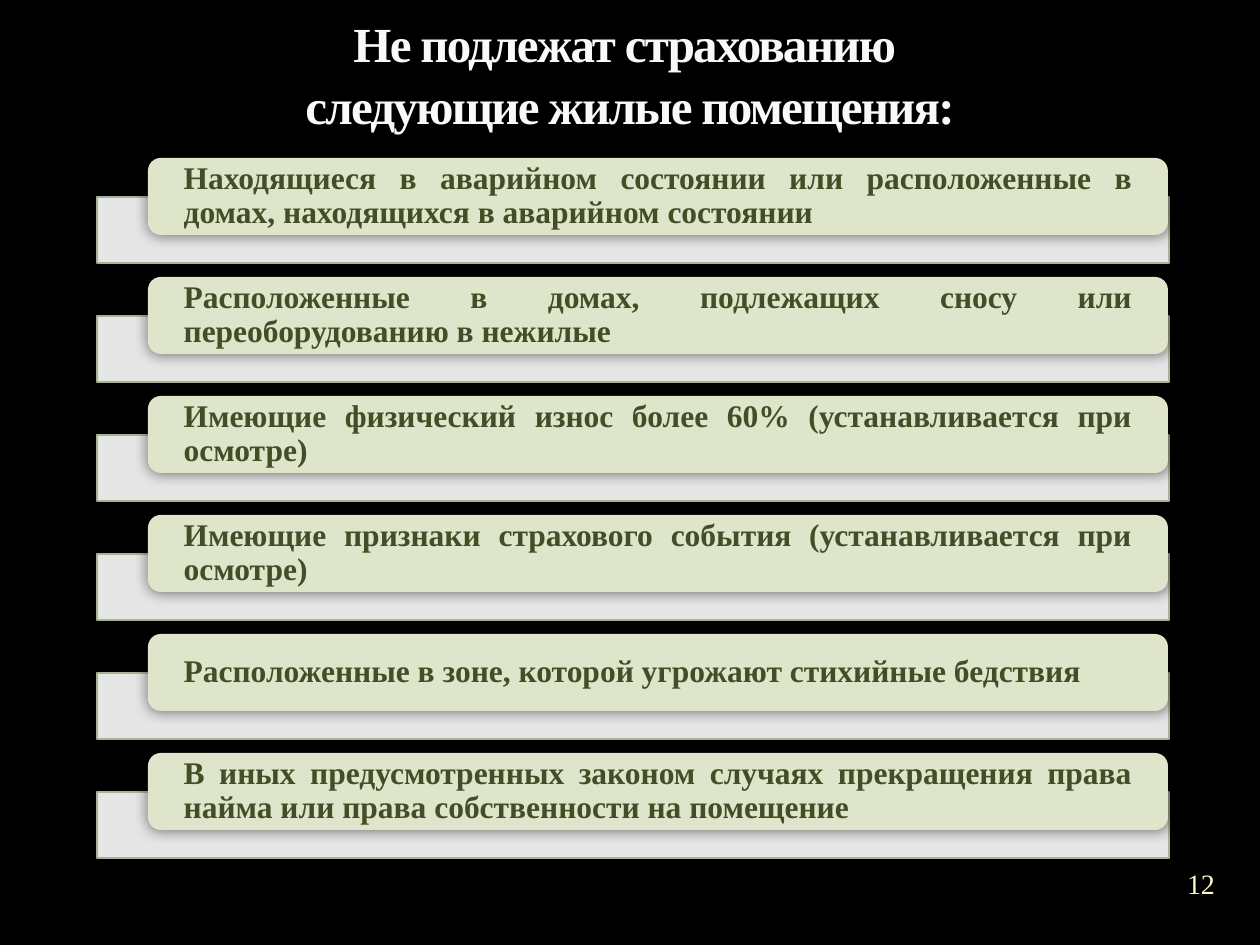
from pptx import Presentation, util as u
from pptx.dml.color import RGBColor
from pptx.enum import shapes, text
from pptx.oxml import parse_xml
from pptx.oxml.ns import nsdecls, qn

PX = 914400 / 126
FONT = "Times New Roman"
CASES = [
    "Находящиеся в аварийном состоянии или расположенные в домах, "
    "находящихся в аварийном состоянии ",
    "Расположенные в домах, подлежащих сносу или переоборудованию в нежилые",
    "Имеющие физический износ более 60% (устанавливается при осмотре)",
    "Имеющие признаки страхового события (устанавливается при осмотре)",
    "Расположенные в зоне, которой угрожают стихийные бедствия",
    "В иных предусмотренных законом случаях прекращения права найма "
    "или права собственности на помещение",
]
FIRST_TOP, PITCH = 158, 119


def px(*lengths):
    return [u.Emu(round(length * PX)) for length in lengths]


def paint(target, color):
    target.solid()
    target.fore_color.rgb = RGBColor.from_string(color)


def set_frame(shape, anchor, side=0, edge=0):
    frame = shape.text_frame
    frame.word_wrap = True
    frame.auto_size = text.MSO_AUTO_SIZE.NONE
    frame.vertical_anchor = anchor
    frame.margin_left, frame.margin_right = px(side, side)
    frame.margin_top, frame.margin_bottom = px(edge, edge)
    return frame.paragraphs[0]


def add_run(paragraph, words, size, color, bold=False):
    run = paragraph.add_run()
    run.text = words
    run.font.name = FONT
    run.font.size = u.Pt(size)
    run.font.bold = bold
    run.font.color.rgb = RGBColor.from_string(color)
    return run


def add_box(slide, kind, box, color):
    shape = slide.shapes.add_shape(kind, *px(*box))
    shape.shadow.inherit = False
    paint(shape.fill, color)
    return shape


def add_glow_shadow(shape):
    effects = shape._element.spPr.find(qn("a:effectLst"))
    effects.append(parse_xml(
        f'<a:outerShdw {nsdecls("a")} blurRad="95250" dist="0" dir="0" rotWithShape="0">'
        '<a:srgbClr val="000000"><a:alpha val="50000"/></a:srgbClr></a:outerShdw>'))


def add_title(slide):
    title = slide.shapes.title
    title.left, title.top, title.width, title.height = px(63, 45, 1134, 95)
    paragraph = set_frame(title, text.MSO_ANCHOR.BOTTOM, side=13, edge=6)
    paragraph.alignment = text.PP_ALIGN.CENTER
    paragraph.line_spacing = 1.05
    lines = ["Не подлежат страхованию ", "следующие жилые помещения:"]
    for number, line in enumerate(lines):
        if number:
            paragraph.add_line_break()
        run = add_run(paragraph, line, 28, "F9F9F9", bold=True)
        run.font._element.set("spc", "-100")


def add_case(slide, top, words):
    # Bar behind the card
    bar = add_box(slide, shapes.MSO_SHAPE.RECTANGLE, (97, top + 39, 1072, 66), "FFFFFF")
    bar_color = bar.fill._xPr.find(qn("a:solidFill"))[0]
    bar_color.append(parse_xml(f'<a:alpha {nsdecls("a")} val="90000"/>'))
    paint(bar.line.fill, "A5B592")
    bar.line.width = u.Pt(1)

    # Card with its wording
    card = add_box(slide, shapes.MSO_SHAPE.ROUNDED_RECTANGLE, (148, top, 1020, 77), "DFE5CA")
    card.line.fill.background()
    add_glow_shadow(card)
    paragraph = set_frame(card, text.MSO_ANCHOR.MIDDLE, side=32)
    paragraph.alignment = text.PP_ALIGN.JUSTIFY
    paragraph.line_spacing = 0.9
    add_run(paragraph, words, 18, "444D26", bold=True)


def add_page_number(slide):
    box = slide.shapes.add_textbox(*px(1159, 852, 84, 63))
    paragraph = set_frame(box, text.MSO_ANCHOR.MIDDLE)
    paragraph.alignment = text.PP_ALIGN.CENTER
    add_run(paragraph, "12", 16, "FEFAC9")


def main():
    presentation = Presentation()
    presentation.slide_width, presentation.slide_height = px(1260, 945)
    slide = presentation.slides.add_slide(presentation.slide_layouts[5])
    paint(slide.background.fill, "000000")

    add_title(slide)
    for row, words in enumerate(CASES):
        add_case(slide, FIRST_TOP + row * PITCH, words)
    add_page_number(slide)
    presentation.save("out.pptx")


if __name__ == "__main__":
    main()
